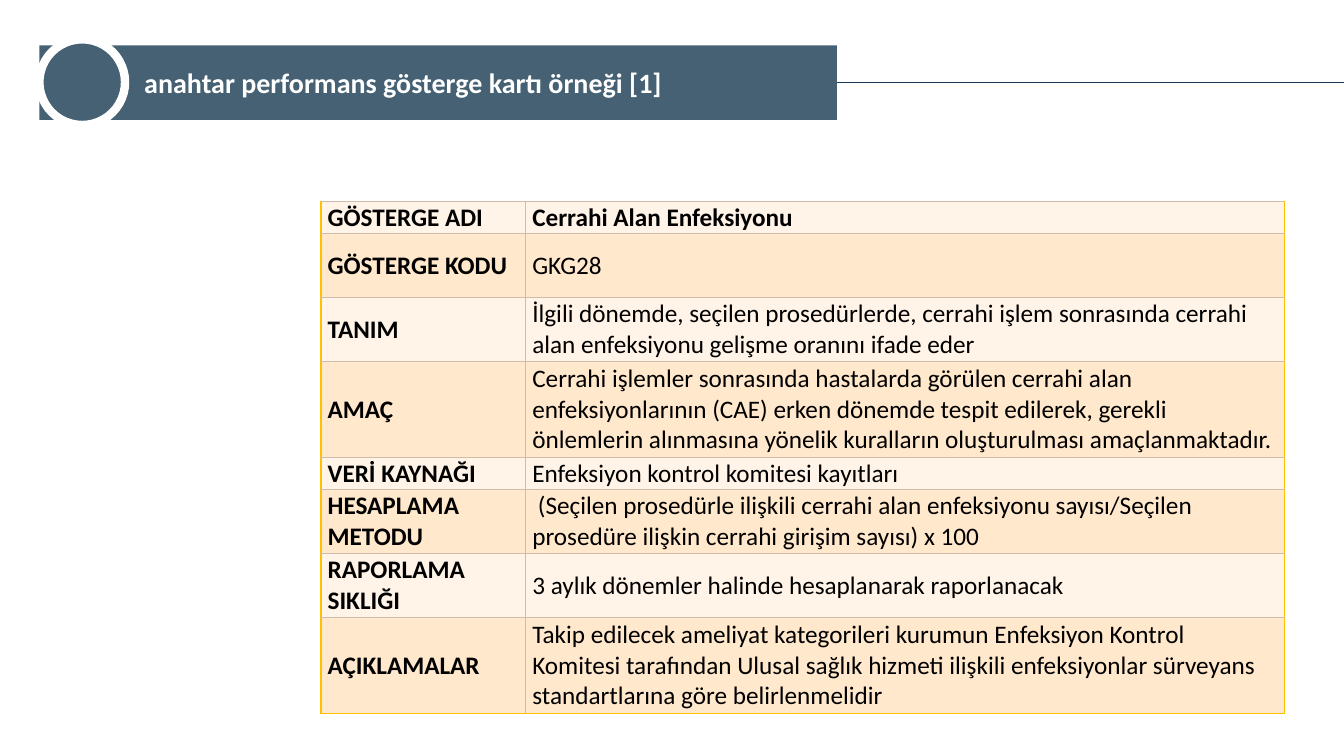
from dataclasses import dataclass

from lxml import etree
from pptx import Presentation
from pptx.dml.color import RGBColor
from pptx.enum.shapes import MSO_CONNECTOR, MSO_SHAPE
from pptx.enum.text import MSO_ANCHOR, MSO_AUTO_SIZE, PP_ALIGN
from pptx.oxml import parse_xml
from pptx.oxml.ns import nsdecls, qn
from pptx.util import Inches, Pt

STRAIGHT, OVAL = MSO_CONNECTOR.STRAIGHT, MSO_SHAPE.OVAL
MIDDLE, LEFT = MSO_ANCHOR.MIDDLE, PP_ALIGN.LEFT
NO_AUTOFIT = MSO_AUTO_SIZE.NONE

TITLE = "anahtar performans gösterge kartı örneği [1]"
ROWS = [
    ("GÖSTERGE ADI", "Cerrahi Alan Enfeksiyonu", 1),
    ("GÖSTERGE KODU", "GKG28", 2),
    ("TANIM", "İlgili dönemde, seçilen prosedürlerde, cerrahi işlem sonrasında "
     "cerrahi alan enfeksiyonu gelişme oranını ifade eder", 2),
    ("AMAÇ", "Cerrahi işlemler sonrasında hastalarda görülen cerrahi alan "
     "enfeksiyonlarının (CAE) erken dönemde tespit edilerek, gerekli önlemlerin "
     "alınmasına yönelik kuralların oluşturulması amaçlanmaktadır.", 3),
    ("VERİ KAYNAĞI", "Enfeksiyon kontrol komitesi kayıtları", 1),
    ("HESAPLAMA METODU", " (Seçilen prosedürle ilişkili cerrahi alan enfeksiyonu "
     "sayısı/Seçilen prosedüre ilişkin cerrahi girişim sayısı) x 100", 2),
    ("RAPORLAMA SIKLIĞI", "3 aylık dönemler halinde hesaplanarak raporlanacak", 2),
    ("AÇIKLAMALAR", "Takip edilecek ameliyat kategorileri kurumun Enfeksiyon Kontrol "
     "Komitesi tarafından Ulusal sağlık hizmeti ilişkili enfeksiyonlar sürveyans "
     "standartlarına göre belirlenmelidir", 3),
]
SLIDE_W, SLIDE_H = 13.33, 7.5
PILL = (0.39, 0.45, 7.91, 0.74)
CIRCLE = (0.39, 0.39, 0.85, 0.85)
TABLE_X, TABLE_Y, TABLE_H = 3.18, 2, 5.08
COL_WIDTHS = (2.03, 7.53)


@dataclass(frozen=True)
class Theme:
    """Colours, font and type sizes of the slide."""
    font: str = "Calibri"
    title_size: int = 20
    cell_size: int = 18
    slate: str = "456173"
    navy: str = "1B3C59"
    white: str = "FFFFFF"
    black: str = "000000"
    gold: str = "FFC000"
    grid: str = "D0BCA8"
    bands: tuple = ("FFF4E7", "FFE8CC")


THEME = Theme()


def rgb(value):
    """Return the colour for a hex string."""
    return RGBColor.from_string(value)


def paint(fill, color):
    """Make a fill solid."""
    fill.solid()
    fill.fore_color.rgb = rgb(color)


def write(tf, text, *, size, color, bold=False):
    """Put formatted text in a text frame."""
    tf.word_wrap = True
    p = tf.paragraphs[0]
    p.alignment, p.line_spacing = LEFT, 1.0
    r = p.add_run()
    r.text = text
    r.font.name, r.font.size, r.font.bold = THEME.font, Pt(size), bold
    r.font.color.rgb = rgb(color)


def add_border(cell, side, color, width):
    """Draw one side of a table cell."""
    tc_pr = cell._tc.get_or_add_tcPr()
    ln = etree.SubElement(tc_pr, qn(f"a:ln{side}"), w=str(Pt(width)))
    fill = etree.SubElement(ln, qn("a:solidFill"))
    etree.SubElement(fill, qn("a:srgbClr"), val=color)


def add_header(s):
    """Build the title pill, its circle and the line to the slide edge."""
    title = s.shapes.title
    title.left, title.top, title.width, title.height = map(Inches, PILL)
    title._element.spPr.append(parse_xml(
        f'<a:prstGeom {nsdecls("a")} prst="roundRect"><a:avLst>'
        '<a:gd name="adj" fmla="val 50000"/></a:avLst></a:prstGeom>'))
    paint(title.fill, THEME.slate)
    tf = title.text_frame
    tf.auto_size, tf.vertical_anchor = NO_AUTOFIT, MIDDLE
    tf.margin_left = Inches(1.04)
    write(tf, TITLE, size=THEME.title_size, color=THEME.white, bold=True)

    circle = s.shapes.add_shape(OVAL, *map(Inches, CIRCLE))
    circle.shadow.inherit = False
    paint(circle.fill, THEME.slate)
    circle.line.color.rgb, circle.line.width = rgb(THEME.white), Pt(6)

    y = Inches(PILL[1] + PILL[3] / 2)
    rule = s.shapes.add_connector(
        STRAIGHT, Inches(PILL[0] + PILL[2]), y, Inches(SLIDE_W), y)
    rule.begin_connect(title, 3)
    rule.line.color.rgb, rule.line.width = rgb(THEME.navy), Pt(0.5)
    etree.SubElement(rule._element.spPr, qn("a:effectLst"))


def add_indicator_table(s):
    """Build the indicator card with rows sized by their line counts."""
    line_h = TABLE_H / sum(lines for _, _, lines in ROWS)
    table = s.shapes.add_table(
        len(ROWS), len(COL_WIDTHS), Inches(TABLE_X), Inches(TABLE_Y),
        Inches(sum(COL_WIDTHS)), Inches(TABLE_H)).table
    table.first_row = table.horz_banding = False
    for column, width in zip(table.columns, COL_WIDTHS):
        column.width = Inches(width)
    last_row, last_col = len(ROWS) - 1, len(COL_WIDTHS) - 1
    for i, (label, value, lines) in enumerate(ROWS):
        table.rows[i].height = Inches(line_h * lines)
        for j, text in enumerate((label, value)):
            cell = table.cell(i, j)
            cell.margin_left = cell.margin_right = Inches(0.07)
            cell.margin_top = cell.margin_bottom = 0
            cell.vertical_anchor = MIDDLE
            write(cell.text_frame, text, size=THEME.cell_size,
                  color=THEME.black, bold=j == 0 or i == 0)
            outer = {"L": j == 0, "R": j == last_col, "T": False, "B": i == last_row}
            for side, is_outer in outer.items():
                color, width = (THEME.gold, 1.5) if is_outer else (THEME.grid, 0.5)
                add_border(cell, side, color, width)
            paint(cell.fill, THEME.bands[i % 2])


def main():
    """Build and save the slide."""
    prs = Presentation()
    prs.slide_width, prs.slide_height = Inches(SLIDE_W), Inches(SLIDE_H)
    s = prs.slides.add_slide(prs.slide_layouts[5])
    add_header(s)
    add_indicator_table(s)
    prs.save("out.pptx")


if __name__ == "__main__":
    main()
